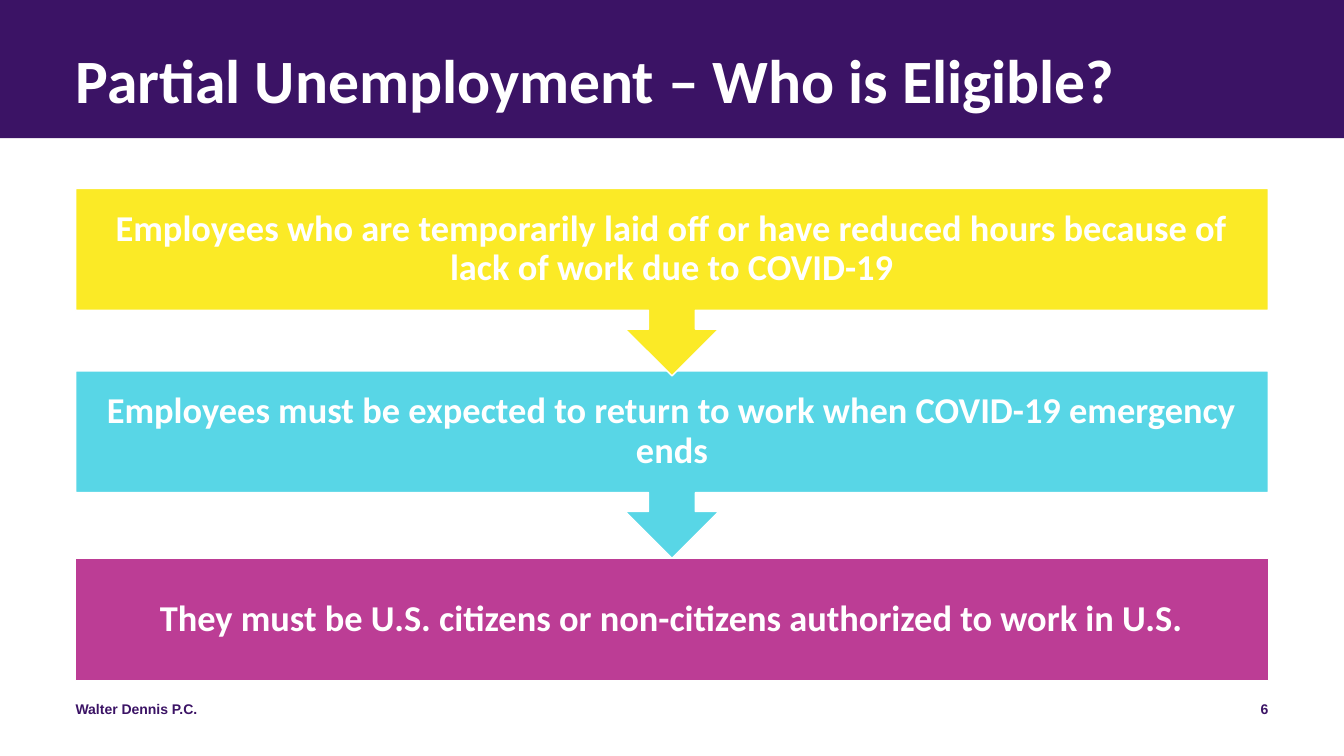
"""Build the slide on who is eligible for partial unemployment."""
from pptx import Presentation
from pptx.dml.color import RGBColor
from pptx.enum.shapes import MSO_SHAPE
from pptx.enum.text import MSO_ANCHOR, MSO_AUTO_SIZE, PP_ALIGN
from pptx.util import Pt

PURPLE = RGBColor(0x3B, 0x13, 0x65)
YELLOW = RGBColor(0xFB, 0xEA, 0x26)
CYAN = RGBColor(0x58, 0xD6, 0xE6)
MAGENTA = RGBColor(0xBC, 0x3D, 0x95)
WHITE = RGBColor(0xFF, 0xFF, 0xFF)

RECTANGLE = MSO_SHAPE.RECTANGLE
CALLOUT = MSO_SHAPE.DOWN_ARROW_CALLOUT
LEFT, CENTER, RIGHT = PP_ALIGN.LEFT, PP_ALIGN.CENTER, PP_ALIGN.RIGHT
TOP, MIDDLE = MSO_ANCHOR.TOP, MSO_ANCHOR.MIDDLE
NO_AUTOFIT = MSO_AUTO_SIZE.NONE

EMU_PER_PX = 9144
SLIDE_WIDTH, SLIDE_HEIGHT = 1333, 750
MARGIN, CONTENT_WIDTH = 75, 1183
TITLE_ONLY = 5


def px(*lengths):
    """Turn px lengths into EMU."""
    return [length * EMU_PER_PX for length in lengths]


class SlideBuilder:
    """Hold the style and the slide being filled."""

    heading_font = "Calibri"
    footer_font = "Arial"

    def __init__(self, slide):
        """Keep the slide to draw on."""
        self.slide = slide

    def set_text(self, frame, text, font, size, color, align=LEFT, anchor=TOP,
                 inset=0, spacing=1.0):
        """Put one bold run into a text frame."""
        frame.word_wrap = True
        frame.auto_size = NO_AUTOFIT
        frame.vertical_anchor = anchor
        (frame.margin_left, frame.margin_top,
         frame.margin_right, frame.margin_bottom) = px(*[inset] * 4)
        paragraph = frame.paragraphs[0]
        paragraph.alignment = align
        paragraph.line_spacing = spacing
        run = paragraph.add_run()
        run.text = text
        run.font.name = font
        run.font.size = Pt(size)
        run.font.bold = True
        run.font.color.rgb = color

    def block(self, kind, left, top, width, height, fill, outline=None):
        """Add a filled shape, outlined when a colour is given."""
        shape = self.slide.shapes.add_shape(kind, *px(left, top, width, height))
        shape.shadow.inherit = False
        shape.fill.solid()
        shape.fill.fore_color.rgb = fill
        if outline is None:
            shape.line.fill.background()
        else:
            shape.line.color.rgb = outline
            shape.line.width = Pt(1)
        return shape

    def title(self, text):
        """Place and format the title placeholder."""
        heading = self.slide.shapes.title
        heading.left, heading.top, heading.width, heading.height = px(
            MARGIN, 50, CONTENT_WIDTH, 81)
        self.set_text(heading.text_frame, text, self.heading_font, 44, WHITE,
                      spacing=0.9)

    def step(self, kind, top, height, fill, text):
        """Add one eligibility condition."""
        condition = self.block(kind, MARGIN, top, CONTENT_WIDTH, height, fill,
                               WHITE)
        self.set_text(condition.text_frame, text, self.heading_font, 26, WHITE,
                      CENTER, MIDDLE, inset=20, spacing=0.9)

    def footer(self, text, left, width, align):
        """Add a small line at the foot of the slide."""
        note = self.slide.shapes.add_textbox(*px(left, 695, width, 40))
        self.set_text(note.text_frame, text, self.footer_font, 10, PURPLE, align)


def main():
    """Build and save the presentation."""
    presentation = Presentation()
    presentation.slide_width, presentation.slide_height = px(
        SLIDE_WIDTH, SLIDE_HEIGHT)
    layout = presentation.slide_layouts[TITLE_ONLY]
    slide = presentation.slides.add_slide(layout)
    builder = SlideBuilder(slide)

    banner = builder.block(RECTANGLE, 0, 0, SLIDE_WIDTH, 137, PURPLE)
    slide.shapes.title._element.addprevious(banner._element)
    builder.title("Partial Unemployment – Who is Eligible?")

    conditions = [
        (RECTANGLE, 554, 121, MAGENTA,
         "They must be U.S. citizens or non-citizens authorized to work in U.S."),
        (CALLOUT, 368, 186, CYAN,
         "Employees must be expected to return to work when COVID-19 emergency ends"),
        (CALLOUT, 187, 186, YELLOW,
         "Employees who are temporarily laid off or have reduced hours because of "
         "lack of work due to COVID-19"),
    ]
    for condition in conditions:
        builder.step(*condition)

    builder.footer("Walter Dennis P.C.", MARGIN, 450, LEFT)
    builder.footer("6", MARGIN + CONTENT_WIDTH - 300, 300, RIGHT)
    presentation.save("out.pptx")


if __name__ == "__main__":
    main()
